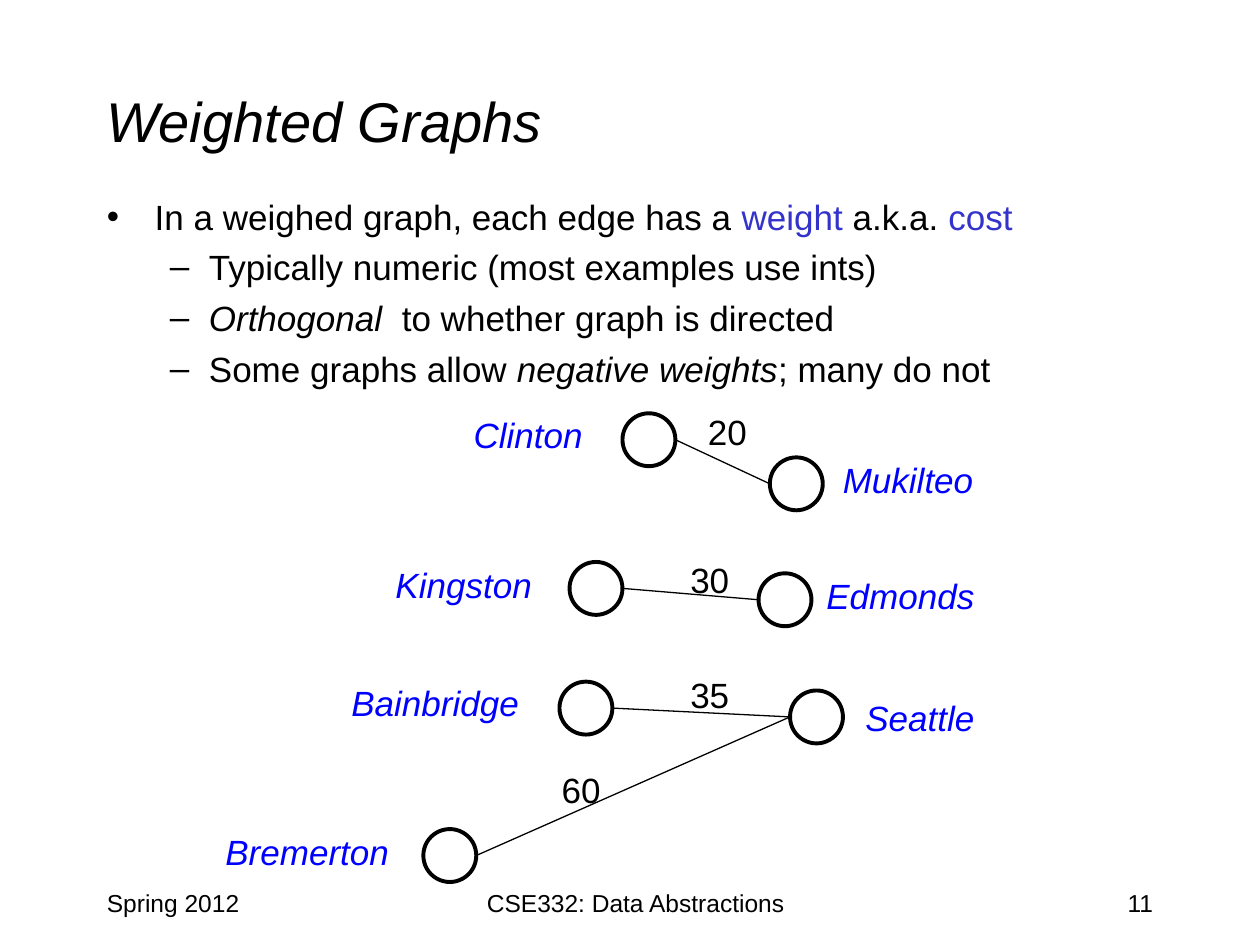
"""Build the Weighted Graphs slide: bullets above a ferry-route graph."""
from lxml import etree
from pptx import Presentation
from pptx.dml.color import RGBColor
from pptx.enum.shapes import MSO_CONNECTOR, MSO_SHAPE
from pptx.enum.text import MSO_ANCHOR, MSO_AUTO_SIZE, PP_ALIGN
from pptx.oxml.ns import qn
from pptx.util import Inches, Pt

LEFT, CENTER, RIGHT = PP_ALIGN.LEFT, PP_ALIGN.CENTER, PP_ALIGN.RIGHT
TOP, MIDDLE = MSO_ANCHOR.TOP, MSO_ANCHOR.MIDDLE
FIT = MSO_AUTO_SIZE.SHAPE_TO_FIT_TEXT
OVAL, STRAIGHT = MSO_SHAPE.OVAL, MSO_CONNECTOR.STRAIGHT

FONT = "Arial"
COLORS = {"ink": "000000", "term": "3333CC", "city": "0000FF", "paper": "FFFFFF"}
WIDTH, HEIGHT = 10, 7.5
MARGIN = 0.075 * WIDTH
CONTENT = WIDTH - 2 * MARGIN
NODE = 0.42
LABEL_HEIGHT = 0.44
WEIGHT_WIDTH = 0.51

TITLE = "Weighted Graphs"
BULLETS = [
    (0, [("In a weighed graph, each edge has a ", "ink", False), ("weight", "term", False),
         (" a.k.a. ", "ink", False), ("cost", "term", False)]),
    (0 + 1, [("Typically numeric (most examples use ints)", "ink", False)]),
    (1, [("Orthogonal", "ink", True), ("  to whether graph is directed", "ink", False)]),
    (1, [("Some graphs allow ", "ink", False), ("negative weights", "ink", True),
         ("; many do not", "ink", False)]),
]
LEVELS = [("•", 0.38, 0.38), ("–", 0.81, 0.31)]
FOOTERS = [
    ("Spring 2012", MARGIN, 2.08, LEFT),
    ("CSE332: Data Abstractions", 3.17, 3.75, CENTER),
    ("11", WIDTH - MARGIN - 2.08, 2.08, RIGHT),
]
CITIES = {
    "Seattle": ((6.27, 5.48), (6.77, 5.48, 1.07)),
    "Edmonds": ((6.02, 4.55), (6.46, 4.51, 1.39)),
    "Mukilteo": ((6.11, 3.63), (6.59, 3.59, 1.25)),
    "Bainbridge": ((4.44, 5.41), (2.69, 5.36, 1.54)),
    "Kingston": ((4.52, 4.46), (3.04, 4.42, 1.29)),
    "Clinton": ((4.94, 3.28), (3.66, 3.23, 1.08)),
    "Bremerton": ((3.36, 6.58), (1.69, 6.54, 1.51)),
}
ROUTES = [
    ("Mukilteo", "Clinton", "20", (5.52, 3.21)),
    ("Edmonds", "Kingston", "30", (5.38, 4.38)),
    ("Seattle", "Bainbridge", "35", (5.38, 5.3)),
    ("Seattle", "Bremerton", "60", (4.36, 6.05)),
]


def color(name):
    return RGBColor.from_string(COLORS[name])


def style(run, size, tint="ink", italic=False):
    run.font.name, run.font.size, run.font.italic = FONT, Pt(size), italic
    run.font.color.rgb = color(tint)


def add_frame(slide, left, top, width, height, wrap=True):
    frame = slide.shapes.add_textbox(*map(Inches, (left, top, width, height))).text_frame
    frame.word_wrap = wrap
    return frame


def add_text(slide, text, box, size, tint="ink", italic=False, align=LEFT, anchor=TOP):
    frame = add_frame(slide, *box)
    frame.text, frame.vertical_anchor = text, anchor
    paragraph = frame.paragraphs[0]
    paragraph.alignment = align
    style(paragraph.runs[0], size, tint, italic)
    return frame


def add_label(slide, text, left, top, width, tint="ink", italic=False):
    frame = add_text(slide, text, (left, top, width, LABEL_HEIGHT), 20, tint, italic)
    frame.word_wrap, frame.auto_size = False, FIT


def add_bullets(slide):
    frame = add_frame(slide, MARGIN, 1.5, CONTENT, 1.75)
    for index, (level, parts) in enumerate(BULLETS):
        paragraph = frame.add_paragraph() if index else frame.paragraphs[0]
        paragraph.level = level
        paragraph.space_before = Pt(5 if index else 0)
        mark, margin, hanging = LEVELS[level]
        properties = paragraph._p.get_or_add_pPr()
        properties.set("marL", str(Inches(margin)))
        properties.set("indent", str(-Inches(hanging)))
        etree.SubElement(properties, qn("a:buFont")).set("typeface", FONT)
        etree.SubElement(properties, qn("a:buChar")).set("char", mark)
        for text, tint, italic in parts:
            run = paragraph.add_run()
            run.text = text
            style(run, 20, tint, italic)


def add_node(slide, left, top):
    node = slide.shapes.add_shape(OVAL, *map(Inches, (left, top, NODE, NODE)))
    node.shadow.inherit = False
    node.fill.solid()
    node.fill.fore_color.rgb = color("paper")
    node.line.color.rgb, node.line.width = color("ink"), Pt(2.25)


def add_route(slide, east, west):
    (east_left, east_top), (west_left, west_top) = CITIES[east][0], CITIES[west][0]
    ends = (east_left, east_top + NODE / 2, west_left + NODE, west_top + NODE / 2)
    route = slide.shapes.add_connector(STRAIGHT, *map(Inches, ends))
    route.line.color.rgb, route.line.width = color("ink"), Pt(0.75)
    etree.SubElement(route._element.spPr, qn("a:effectLst"))


def main():
    deck = Presentation()
    deck.slide_width, deck.slide_height = Inches(WIDTH), Inches(HEIGHT)
    slide = deck.slides.add_slide(deck.slide_layouts[6])
    add_text(slide, TITLE, (MARGIN, 0.33, CONTENT, 1.25), 32, italic=True, anchor=MIDDLE)
    add_bullets(slide)
    for text, left, width, align in FOOTERS:
        add_text(slide, text, (left, HEIGHT - 0.5, width, 0.5), 14, align=align)
    for node, _ in CITIES.values():
        add_node(slide, *node)
    for east, west, _, _ in ROUTES:
        add_route(slide, east, west)
    for _, _, weight, place in ROUTES:
        add_label(slide, weight, *place, WEIGHT_WIDTH)
    for city, (_, place) in CITIES.items():
        add_label(slide, city, *place, "city", True)
    deck.save("out.pptx")


if __name__ == "__main__":
    main()
